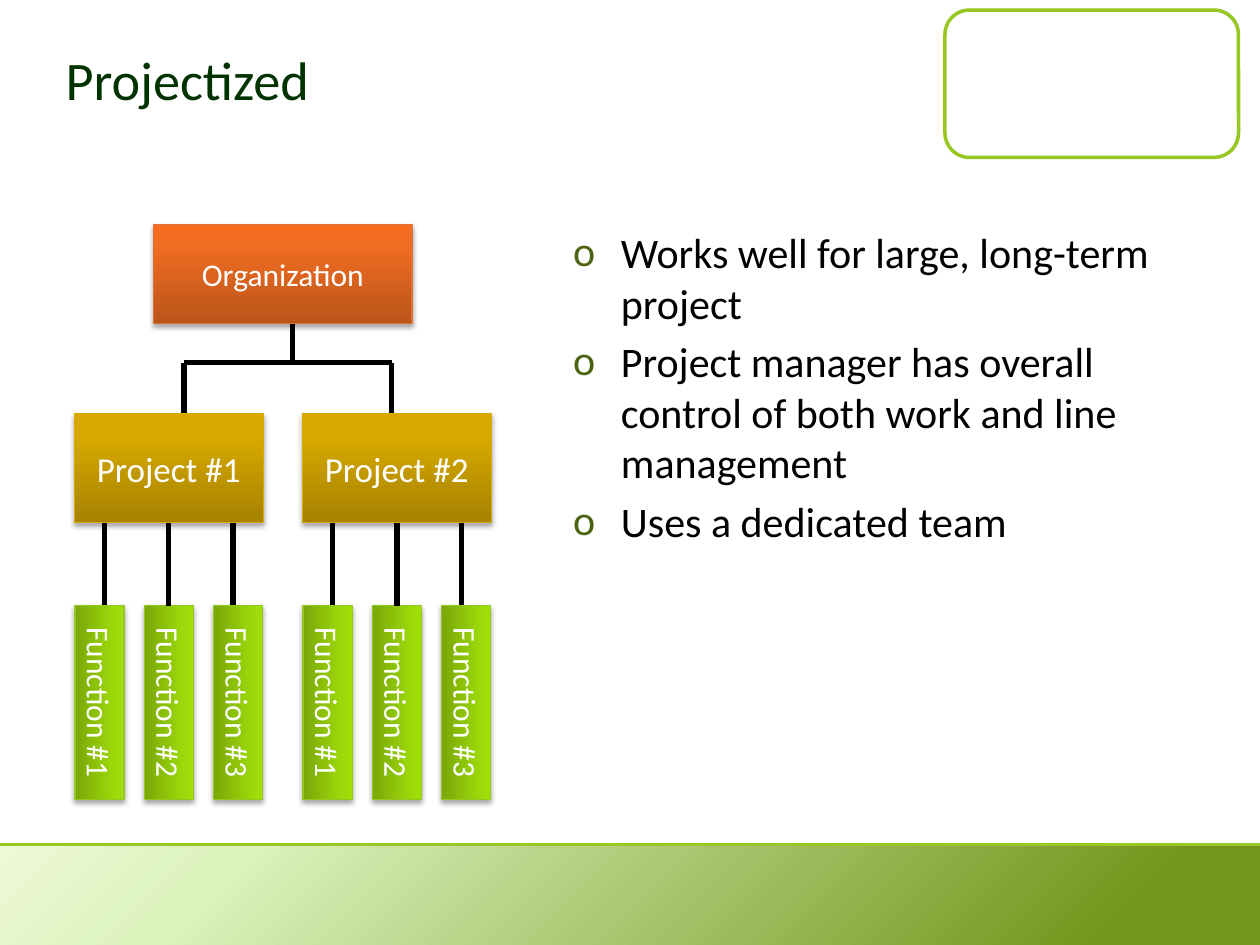
from lxml.etree import SubElement
from pptx import Presentation
from pptx.dml.color import RGBColor
from pptx.enum.shapes import MSO_CONNECTOR, MSO_SHAPE
from pptx.enum.text import MSO_ANCHOR, PP_ALIGN
from pptx.oxml.ns import qn
from pptx.util import Inches, Pt

COLORS = {
    "white": "FFFFFF", "black": "000000", "title": "003300",
    "green": "98C723", "bullet": "4C6312",
}
STYLES = {
    "org": ("DF7337", [(0, "BA541A"), (80, "F16D22"), (100, "F66C1E")]),
    "project": ("D9AA00", [(0, "A68200"), (80, "D7A900"), (100, "D8A900")]),
    "task": ("96C71E", [(0, "79A708"), (80, "9DD90A"), (100, "A0DE06")]),
}
FOOTER = [(0, "EEF8D5"), (19, "DAF2BC"), (89, "72951A")]
POINTS = [
    "Works well for large, long-term project",
    "Project manager has overall control of both work and line management",
    "Uses a dedicated team",
]


def color(name):
    return RGBColor.from_string(COLORS.get(name, name))


def set_font(para, size, name):
    para.font.name = "Calibri"
    para.font.size = Pt(size)
    para.font.color.rgb = color(name)


def add_fill(shape, stops, angle):
    shape.fill.gradient()
    grad = shape._element.spPr.find(qn("a:gradFill"))
    for child in list(grad):
        grad.remove(child)
    group = SubElement(grad, qn("a:gsLst"))
    for place, tone in stops:
        stop = SubElement(group, qn("a:gs"), pos=str(place * 1000))
        SubElement(stop, qn("a:srgbClr"), val=tone)
    SubElement(grad, qn("a:lin"), ang=str(angle * 60000), scaled="0")


def add_shade(shape):
    effects = shape._element.spPr.find(qn("a:effectLst"))
    shade = SubElement(effects, qn("a:outerShdw"), blurRad=str(Pt(3.1)),
                       dist=str(Pt(1.8)), dir="5400000", rotWithShape="0")
    tone = SubElement(shade, qn("a:srgbClr"), val=COLORS["black"])
    SubElement(tone, qn("a:alpha"), val="35000")


def add_shape(slide, kind, left, top, width, height):
    shape = slide.shapes.add_shape(
        kind, Inches(left), Inches(top), Inches(width), Inches(height))
    shape.shadow.inherit = False
    return shape


def add_box(slide, text, style, size, left, top, width, height):
    box = add_shape(slide, MSO_SHAPE.RECTANGLE, left, top, width, height)
    edge, stops = STYLES[style]
    add_fill(box, stops, 270)
    box.line.color.rgb = color(edge)
    box.line.width = Pt(0.75)
    add_shade(box)
    frame = box.text_frame
    frame.vertical_anchor = MSO_ANCHOR.MIDDLE
    para = frame.paragraphs[0]
    para.text = text
    para.alignment = PP_ALIGN.CENTER
    set_font(para, size, "white")
    return box


def add_line(slide, x1, y1, x2, y2, tone="black", width=3):
    line = slide.shapes.add_connector(
        MSO_CONNECTOR.STRAIGHT, Inches(x1), Inches(y1), Inches(x2), Inches(y2))
    line.line.color.rgb = color(tone)
    line.line.width = Pt(width)
    SubElement(line._element.spPr, qn("a:effectLst"))
    return line


def add_frame(slide):
    panel = add_shape(slide, MSO_SHAPE.ROUNDED_RECTANGLE, 7.5, 0.08, 2.33, 1.17)
    panel.fill.solid()
    panel.fill.fore_color.rgb = color("white")
    panel.line.color.rgb = color("green")
    panel.line.width = Pt(2)
    footer = add_shape(slide, MSO_SHAPE.RECTANGLE, 0, 6.71, 10, 0.79)
    add_fill(footer, FOOTER, 45)
    footer.line.fill.background()
    add_line(slide, 0, 6.7, 10, 6.7, "green", 1.5)


def add_title(slide, text):
    title = slide.shapes.title
    title.left, title.top = Inches(0.42), Inches(0)
    title.width, title.height = Inches(6.75), Inches(1.25)
    title.text_frame.vertical_anchor = MSO_ANCHOR.MIDDLE
    para = title.text_frame.paragraphs[0]
    para.text = text
    para.alignment = PP_ALIGN.LEFT
    set_font(para, 31, "title")


def add_list(slide):
    frame = slide.shapes.add_textbox(
        Inches(4.45), Inches(1.75), Inches(5.05), Inches(4.95)).text_frame
    frame.word_wrap = True
    for i, text in enumerate(POINTS):
        para = frame.add_paragraph() if i else frame.paragraphs[0]
        para.text = text
        if i:
            para.space_before = Pt(4.8)
        props = para._p.get_or_add_pPr()
        props.set("marL", str(Inches(0.38)))
        props.set("indent", str(Inches(-0.38)))
        tone = SubElement(props, qn("a:buClr"))
        SubElement(tone, qn("a:srgbClr"), val=COLORS["bullet"])
        SubElement(props, qn("a:buFont"), typeface="Calibri")
        SubElement(props, qn("a:buChar"), char="o")
        set_font(para, 24, "black")


def add_branch(slide, number, left):
    mid = left + 0.75
    for side in (-1, 1):
        x = mid + side * 0.51
        add_line(slide, x, 4.14, x, 4.81)
    project = add_box(slide, f"Project #{number}", "project", 20,
                      left, 3.28, 1.5, 0.87)
    for i in range(3):
        x = mid + (i - 1) * 0.55
        task = add_box(slide, f"Function #{i + 1}", "task", 18,
                       x - 0.77, 5.38, 1.54, 0.39)
        task.rotation = 90
        if i == 1:
            link = add_line(slide, x, 4.15, x, 4.81)
            link.begin_connect(project, 2)
            link.end_connect(task, 1)
            link.end_x, link.end_y = Inches(x), Inches(4.81)


def add_chart(slide):
    for x in (1.46, 3.11):
        add_line(slide, x, 2.88, x, 3.28)
    add_line(slide, 1.46, 2.88, 3.11, 2.88)
    add_line(slide, 2.32, 2.57, 2.32, 2.88)
    add_box(slide, "Organization", "org", 18, 1.22, 1.78, 2.05, 0.79)
    for number, left in enumerate((0.59, 2.4), 1):
        add_branch(slide, number, left)


def main():
    deck = Presentation()
    deck.slide_width, deck.slide_height = Inches(10), Inches(7.5)
    slide = deck.slides.add_slide(deck.slide_layouts[5])
    add_frame(slide)
    add_title(slide, "Projectized")
    add_list(slide)
    add_chart(slide)
    deck.save("out.pptx")


if __name__ == "__main__":
    main()
